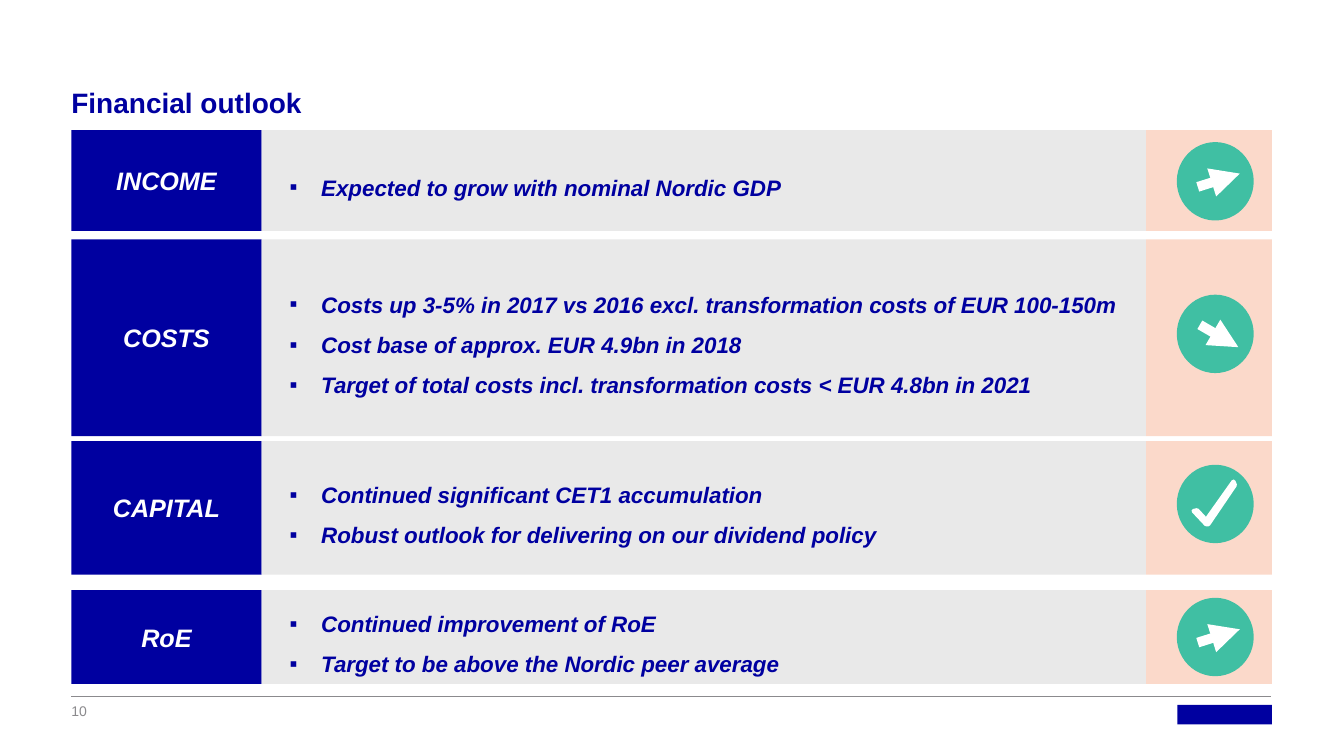
"""Build the financial outlook slide."""
from lxml import etree
from pptx import Presentation
from pptx.dml.color import RGBColor
from pptx.enum.shapes import MSO_CONNECTOR, MSO_SHAPE
from pptx.enum.text import MSO_ANCHOR, MSO_AUTO_SIZE, PP_ALIGN
from pptx.oxml.ns import qn
from pptx.util import Pt

RECT, OVAL = MSO_SHAPE.RECTANGLE, MSO_SHAPE.OVAL
STRAIGHT = MSO_CONNECTOR.STRAIGHT
MIDDLE, BOTTOM = MSO_ANCHOR.MIDDLE, MSO_ANCHOR.BOTTOM
LEFT, CENTER = PP_ALIGN.LEFT, PP_ALIGN.CENTER
NO_FIT = MSO_AUTO_SIZE.NONE

NAVY, GREY, PINK, GREEN = "0000A0", "E9E9E9", "FBD9CA", "40BFA3"
WHITE, DIM = "FFFFFF", "8B8A8D"
TITLE, PAGE = "Financial outlook", "10"

# label, top, height, icon centre, icon, bullets
ROWS = [
    ("INCOME", 93, 72, 129.5, "up", ["Expected to grow with nominal Nordic GDP"]),
    ("COSTS", 171, 140.5, 238.5, "down", [
        "Costs up 3-5% in 2017 vs 2016 excl. transformation costs of EUR 100-150m",
        "Cost base of approx. EUR 4.9bn in 2018",
        "Target of total costs incl. transformation costs < EUR 4.8bn in 2021"]),
    ("CAPITAL", 315, 95.5, 360, "check", [
        "Continued significant CET1 accumulation",
        "Robust outlook for delivering on our dividend policy"]),
    ("RoE", 421.5, 67, 455, "up", [
        "Continued improvement of RoE",
        "Target to be above the Nordic peer average"]),
]
ARROWS = {"up": (-12.5, 4, 17.5, -5.5), "down": (-11, -6.5, 16.5, 9.5)}
CHECK = [(13, -16), (-6.5, 11.5), (-13, 4.5), (-15.5, 5),
         (-6.5, 14.5), (-5, 14.5), (14, -13.5)]
EDGE, LABEL_W, TEXT_W, ICON_W = 51, 136, 632, 90
TEXT_X = EDGE + LABEL_W
ICON_X = TEXT_X + TEXT_W
MID_X, DISC_W, DISC_H = 868.5, 55, 56


def color(code):
    return RGBColor.from_string(code)


def put(par, text, size, code, bold=False, slant=False):
    run = par.add_run()
    run.text = text
    font = run.font
    font.name, font.size, font.bold, font.italic = "Arial", Pt(size), bold, slant
    font.color.rgb = color(code)


def shape(kind, x, y, w, h, code):
    item = slide.shapes.add_shape(kind, Pt(x), Pt(y), Pt(w), Pt(h))
    item.shadow.inherit = False
    item.fill.solid()
    item.fill.fore_color.rgb = color(code)
    item.line.fill.background()
    item.text_frame.vertical_anchor = MIDDLE
    return item


def line(x1, y1, x2, y2, code, width, head=False):
    item = slide.shapes.add_connector(STRAIGHT, Pt(x1), Pt(y1), Pt(x2), Pt(y2))
    item.line.color.rgb = color(code)
    item.line.width = Pt(width)
    props = item.element.spPr
    if head:
        etree.SubElement(props.find(qn("a:ln")), qn("a:tailEnd"), type="triangle")
    etree.SubElement(props, qn("a:effectLst"))


def bare(frame, anchor):
    frame.margin_left = frame.margin_right = 0
    frame.margin_top = frame.margin_bottom = 0
    frame.auto_size, frame.word_wrap = NO_FIT, True
    frame.vertical_anchor = anchor
    par = frame.paragraphs[0]
    par.alignment = LEFT
    return par


def bullets(frame, texts):
    for i, text in enumerate(texts):
        par = frame.add_paragraph() if i else frame.paragraphs[0]
        par.alignment, par.line_spacing = LEFT, 1.5
        props = par._p.get_or_add_pPr()
        props.set("marL", str(Pt(35.5)))
        props.set("indent", str(Pt(-22.5)))
        etree.SubElement(props, qn("a:buFont"), typeface="Arial")
        etree.SubElement(props, qn("a:buChar"), char="▪")
        put(par, text, 16, NAVY, True, True)


def check(x, y):
    spots = [(Pt(x + dx), Pt(y + dy)) for dx, dy in CHECK]
    pen = slide.shapes.build_freeform(*spots[0], scale=1.0)
    pen.add_line_segments(spots[1:], close=True)
    tick = pen.convert_to_shape()
    tick.shadow.inherit = False
    tick.fill.solid()
    tick.fill.fore_color.rgb = color(WHITE)
    tick.line.color.rgb = color(WHITE)
    tick.line.width = Pt(3)
    etree.SubElement(tick.line._get_or_add_ln(), qn("a:round"))


deck = Presentation()
deck.slide_width, deck.slide_height = Pt(960.5), Pt(540)
slide = deck.slides.add_slide(deck.slide_layouts[5])

title = slide.shapes.title
title.left, title.top, title.width, title.height = Pt(EDGE), Pt(28), Pt(567), Pt(57)
put(bare(title.text_frame, BOTTOM), TITLE, 20, NAVY, True)

for label, top, high, mid, icon, texts in ROWS:
    name = shape(RECT, EDGE, top, LABEL_W, high, NAVY)
    par = name.text_frame.paragraphs[0]
    par.alignment = CENTER
    put(par, label, 18, WHITE, True, True)
    bullets(shape(RECT, TEXT_X, top, TEXT_W, high, GREY).text_frame, texts)
    shape(RECT, ICON_X, top, ICON_W, high, PINK)
    shape(OVAL, MID_X - DISC_W / 2, mid - DISC_H / 2, DISC_W, DISC_H, GREEN)
    if icon == "check":
        check(MID_X, mid)
    else:
        x1, y1, x2, y2 = ARROWS[icon]
        line(MID_X + x1, mid + y1, MID_X + x2, mid + y2, WHITE, 7, True)

line(EDGE, 497.5, 908.5, 497.5, DIM, 0.75)
page = slide.shapes.add_textbox(Pt(EDGE), Pt(502), Pt(25), Pt(11.5))
put(bare(page.text_frame, MIDDLE), PAGE, 10, DIM)
shape(RECT, 841.5, 503.5, 67.5, 14, NAVY)

deck.save("out.pptx")
